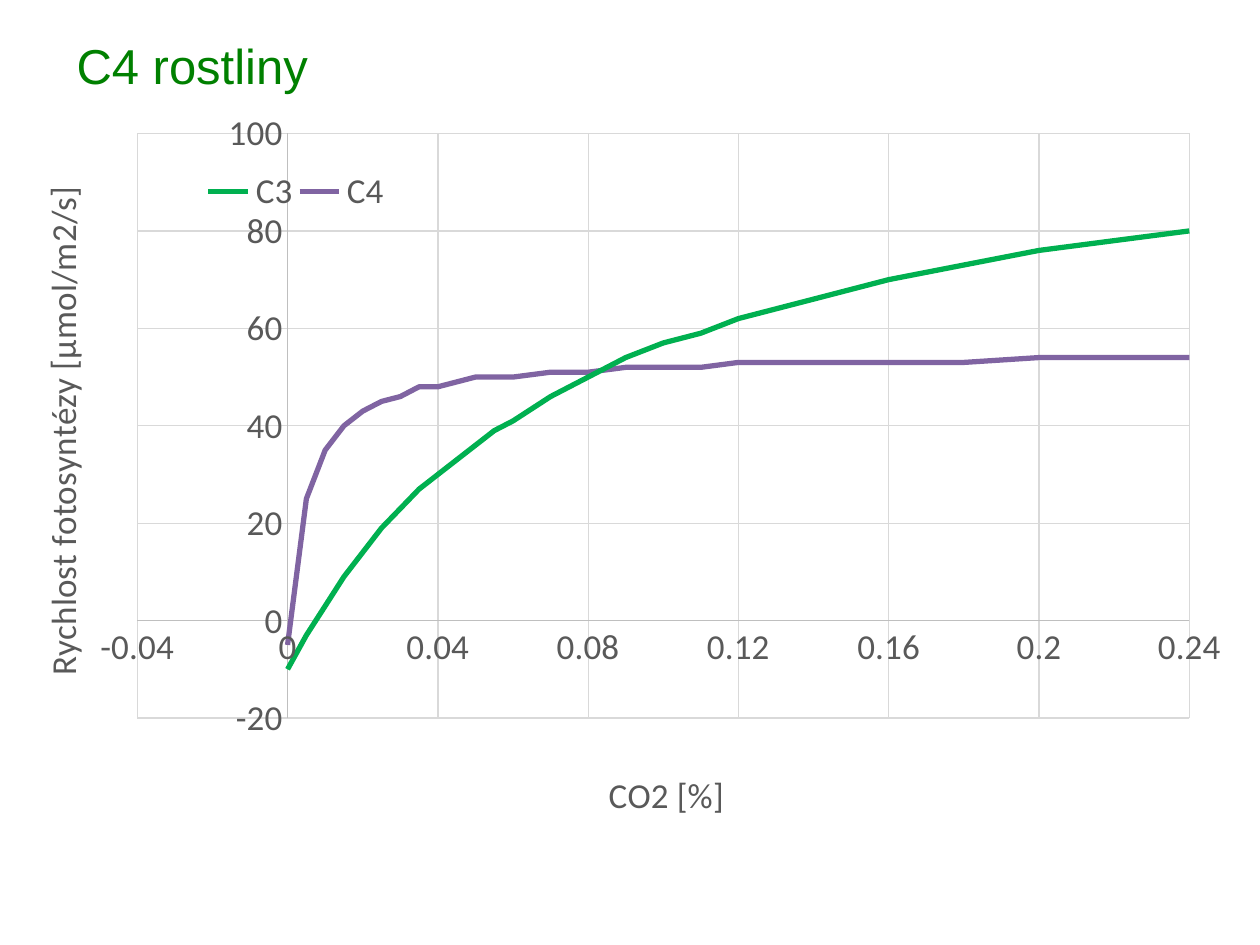
from dataclasses import dataclass

from pptx import Presentation
from pptx.chart.data import XyChartData
from pptx.dml.color import RGBColor as Rgb
from pptx.enum.chart import XL_CHART_TYPE as ChartType
from pptx.enum.chart import XL_LEGEND_POSITION as LegendPos
from pptx.enum.chart import XL_TICK_MARK as TickMark
from pptx.enum.text import MSO_ANCHOR as Anchor
from pptx.oxml import parse_xml
from pptx.oxml.ns import nsdecls, qn
from pptx.util import Inches, Pt

CO2_LEVELS = [step / 1000 for step in (*range(0, 60, 5), *range(60, 120, 10), *range(120, 241, 20))]
C3_RATES = [-10, -3, 3, 9, 14, 19, 23, 27, 30, 33, 36, 39, 41,
            46, 50, 54, 57, 59, 62, 66, 70, 73, 76, 78, 80]
C4_RATES = [-5, 25, 35, 40, 43, 45, 46, 48, 48, 49, 50, 50, 50,
            51, 51, 52, 52, 52, 53, 53, 53, 53, 54, 54, 54]


@dataclass(frozen=True)
class Theme:
    """Colours, fonts and type sizes of the slide."""

    heading: Rgb = Rgb.from_string("008000")
    label: Rgb = Rgb.from_string("595959")
    axis: Rgb = Rgb.from_string("BFBFBF")
    grid: Rgb = Rgb.from_string("D9D9D9")
    c3: Rgb = Rgb.from_string("00B050")
    c4: Rgb = Rgb.from_string("8064A2")
    heading_font: str = "Arial"
    chart_font: str = "Calibri"
    heading_size: Pt = Pt(28)
    chart_size: Pt = Pt(20)
    hairline: Pt = Pt(0.75)
    curve: Pt = Pt(3)


class SlideBuilder:
    """Holds the theme and the current slide and adds elements to it."""

    def __init__(self, slide, theme):
        self.slide = slide
        self.theme = theme

    def style(self, font, name, size, color):
        font.name, font.size, font.bold = name, size, False
        font.color.rgb = color

    def style_label(self, font):
        self.style(font, self.theme.chart_font, self.theme.chart_size, self.theme.label)

    def style_line(self, line, color, width):
        line.color.rgb = color
        line.width = width

    def heading(self, text, left, top, width, height):
        frame = self.slide.shapes.add_textbox(
            Inches(left), Inches(top), Inches(width), Inches(height)).text_frame
        frame.word_wrap = True
        frame.vertical_anchor = Anchor.MIDDLE
        run = frame.paragraphs[0].add_run()
        run.text = text
        self.style(run.font, self.theme.heading_font, self.theme.heading_size, self.theme.heading)

    def place(self, part, index, chart_box, left, top, width=None, height=None, inner=False):
        chart_left, chart_top, chart_width, chart_height = chart_box
        for old in part.findall(qn("c:layout")):
            part.remove(old)
        fractions = {"x": (left - chart_left) / chart_width, "y": (top - chart_top) / chart_height}
        if width:
            fractions |= {"w": width / chart_width, "h": height / chart_height}
        target = '<c:layoutTarget val="inner"/>' if inner else ""
        modes = '<c:xMode val="edge"/><c:yMode val="edge"/>'
        sizes = "".join(f'<c:{key} val="{value:.4f}"/>' for key, value in fractions.items())
        part.insert(index, parse_xml(
            f'<c:layout {nsdecls("c")}><c:manualLayout>{target}{modes}{sizes}'
            '</c:manualLayout></c:layout>'))

    def axis(self, axis, title, chart_box, title_at, low, high, step, rotation=0):
        axis.minimum_scale, axis.maximum_scale, axis.major_unit = low, high, step
        axis.major_tick_mark = axis.minor_tick_mark = TickMark.NONE
        axis.has_major_gridlines = True
        self.style_line(axis.major_gridlines.format.line, self.theme.grid, self.theme.hairline)
        self.style_line(axis.format.line, self.theme.axis, self.theme.hairline)
        self.style_label(axis.tick_labels.font)
        axis.tick_labels.number_format = "General"
        axis.tick_labels.number_format_is_linked = False
        run = axis.axis_title.text_frame.paragraphs[0].add_run()
        run.text = title
        self.style_label(run.font)
        caption = axis.axis_title.element
        caption.find(".//" + qn("a:bodyPr")).set("rot", str(rotation * 60000))
        self.place(caption, 1, chart_box, *title_at)

    def scatter(self, curves, levels, box):
        data = XyChartData()
        for name, rates, _ in curves:
            series = data.add_series(name)
            for level, rate in zip(levels, rates):
                series.add_data_point(level, rate)
        chart = self.slide.shapes.add_chart(
            ChartType.XY_SCATTER_SMOOTH_NO_MARKERS, *map(Inches, box), data).chart
        chart.has_title = False
        chart.font.name, chart.font.size = self.theme.chart_font, self.theme.chart_size
        plot = chart.plots[0]
        plot.vary_by_categories = False
        for series, (_, _, color) in zip(plot.series, curves):
            series.smooth = True
            self.style_line(series.format.line, color, self.theme.curve)
        return chart

    def legend(self, chart, chart_box, *area):
        chart.has_legend = True
        chart.legend.position = LegendPos.BOTTOM
        chart.legend.include_in_layout = True
        self.style_label(chart.legend.font)
        self.place(chart.element.find(".//" + qn("c:legend")), 1, chart_box, *area)


def main():
    """Build the slide comparing photosynthesis of C3 and C4 plants."""
    deck = Presentation()
    deck.slide_width, deck.slide_height = Inches(10), Inches(7.5)
    theme = Theme()
    builder = SlideBuilder(deck.slides.add_slide(deck.slide_layouts[6]), theme)
    builder.heading("C4 rostliny", 0.51, 0.02, 9, 0.99)

    chart_box = (-0.03, 0.76, 9.91, 6.38)
    curves = [("C3", C3_RATES, theme.c3), ("C4", C4_RATES, theme.c4)]
    chart = builder.scatter(curves, CO2_LEVELS, chart_box)
    builder.axis(chart.category_axis, "CO2 [%]", chart_box, (4.78, 6.06), -0.04, 0.24, 0.04)
    builder.axis(chart.value_axis, "Rychlost fotosyntézy [µmol/m2/s]", chart_box,
                 (0.25, 1.43), -20, 100, 20, rotation=-90)
    builder.legend(chart, chart_box, 1.6, 1.32, 1.5, 0.4)
    plot_area = chart.element.find(".//" + qn("c:plotArea"))
    builder.place(plot_area, 0, chart_box, 1.09, 1.06, 8.35, 4.64, inner=True)
    deck.save("out.pptx")


if __name__ == "__main__":
    main()
